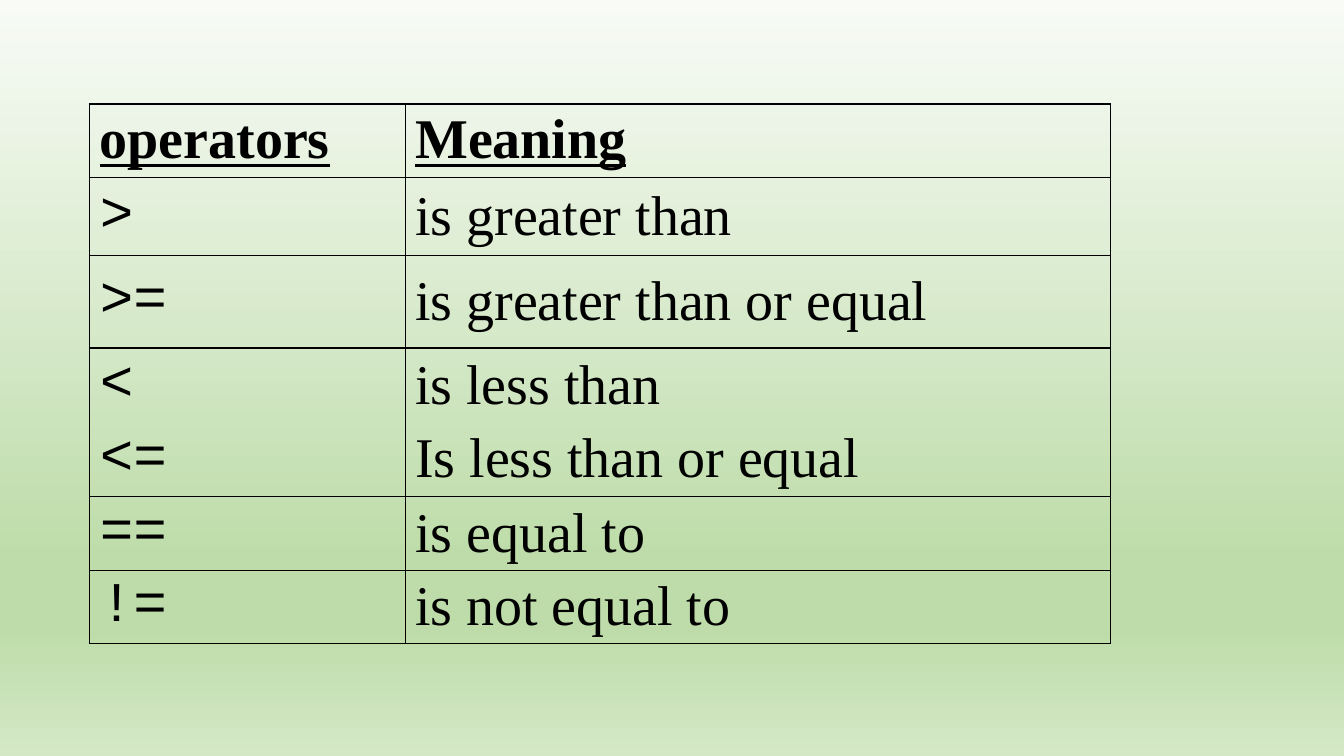
from lxml import etree
from pptx import Presentation
from pptx.dml.color import RGBColor
from pptx.enum.text import MSO_ANCHOR
from pptx.oxml.ns import qn
from pptx.util import Cm, Pt

TOP, MIDDLE = MSO_ANCHOR.TOP, MSO_ANCHOR.MIDDLE
BLACK = RGBColor(0x00, 0x00, 0x00)
PALE = RGBColor(0xF8, 0xFB, 0xF6)
GREEN = RGBColor(0xBE, 0xDC, 0xAA)
LIGHT_GREEN = RGBColor(0xD4, 0xE8, 0xC6)

SERIF, MONO = "Times New Roman", "Courier New"
GRADIENT = [(0, PALE), (74, GREEN), (83, GREEN), (100, LIGHT_GREEN)]
COLUMN_WIDTHS = [7.95, 17.78]
OPERATORS = [
    ("operators", "Meaning", 1.85),
    (">", "is greater than", 1.96),
    (">=", "is greater than or equal", 2.34),
    ("<\n<=", "is less than\nIs less than or equal", 3.75),
    ("==", "is equal to", 1.85),
    ("!=", "is not equal to", 1.85),
]


class SlideBuilder:
    size = Pt(40)
    space_before = Pt(8)
    border = Pt(1)

    def __init__(self, slide):
        self.slide = slide

    def add_color(self, parent, color):
        etree.SubElement(parent, qn("a:srgbClr"), val=str(color))

    def background(self, stops):
        fill = self.slide.background.fill
        fill.gradient()
        fill.gradient_angle = 270
        stop_list = self.slide.element.find(".//" + qn("a:gsLst"))
        for old in list(stop_list):
            stop_list.remove(old)
        for percent, color in stops:
            stop = etree.SubElement(stop_list, qn("a:gs"), pos=str(percent * 1000))
            self.add_color(stop, color)

    def borders(self, cell):
        tc_pr = cell._tc.get_or_add_tcPr()
        for side in ("L", "R", "T", "B"):
            line = etree.SubElement(tc_pr, qn("a:ln" + side), w=str(int(self.border)))
            self.add_color(etree.SubElement(line, qn("a:solidFill")), BLACK)

    def cell(self, cell, text, font, header):
        self.borders(cell)
        cell.fill.background()
        cell.vertical_anchor = TOP if header else MIDDLE
        tf = cell.text_frame
        tf.text = text
        for p in tf.paragraphs:
            p.space_before = self.space_before
            for r in p.runs:
                r.font.name = font
                r.font.size = self.size
                r.font.bold = header
                r.font.underline = header
                r.font.color.rgb = BLACK

    def table(self, left, top, widths, rows):
        height = sum(row[-1] for row in rows)
        frame = self.slide.shapes.add_table(
            len(rows), len(widths), Cm(left), Cm(top), Cm(sum(widths)), Cm(height))
        table = frame.table
        table.first_row = False
        table.horz_banding = False
        for column, width in zip(table.columns, widths):
            column.width = Cm(width)
        for i, (operator, meaning, row_height) in enumerate(rows):
            header = i == 0
            table.rows[i].height = Cm(row_height)
            self.cell(table.cell(i, 0), operator, SERIF if header else MONO, header)
            self.cell(table.cell(i, 1), meaning, SERIF, header)


def main():
    prs = Presentation()
    prs.slide_width, prs.slide_height = Cm(33.87), Cm(19.05)
    s = SlideBuilder(prs.slides.add_slide(prs.slide_layouts[6]))
    s.background(GRADIENT)
    s.table(2.26, 2.62, COLUMN_WIDTHS, OPERATORS)
    prs.save("out.pptx")


if __name__ == "__main__":
    main()
